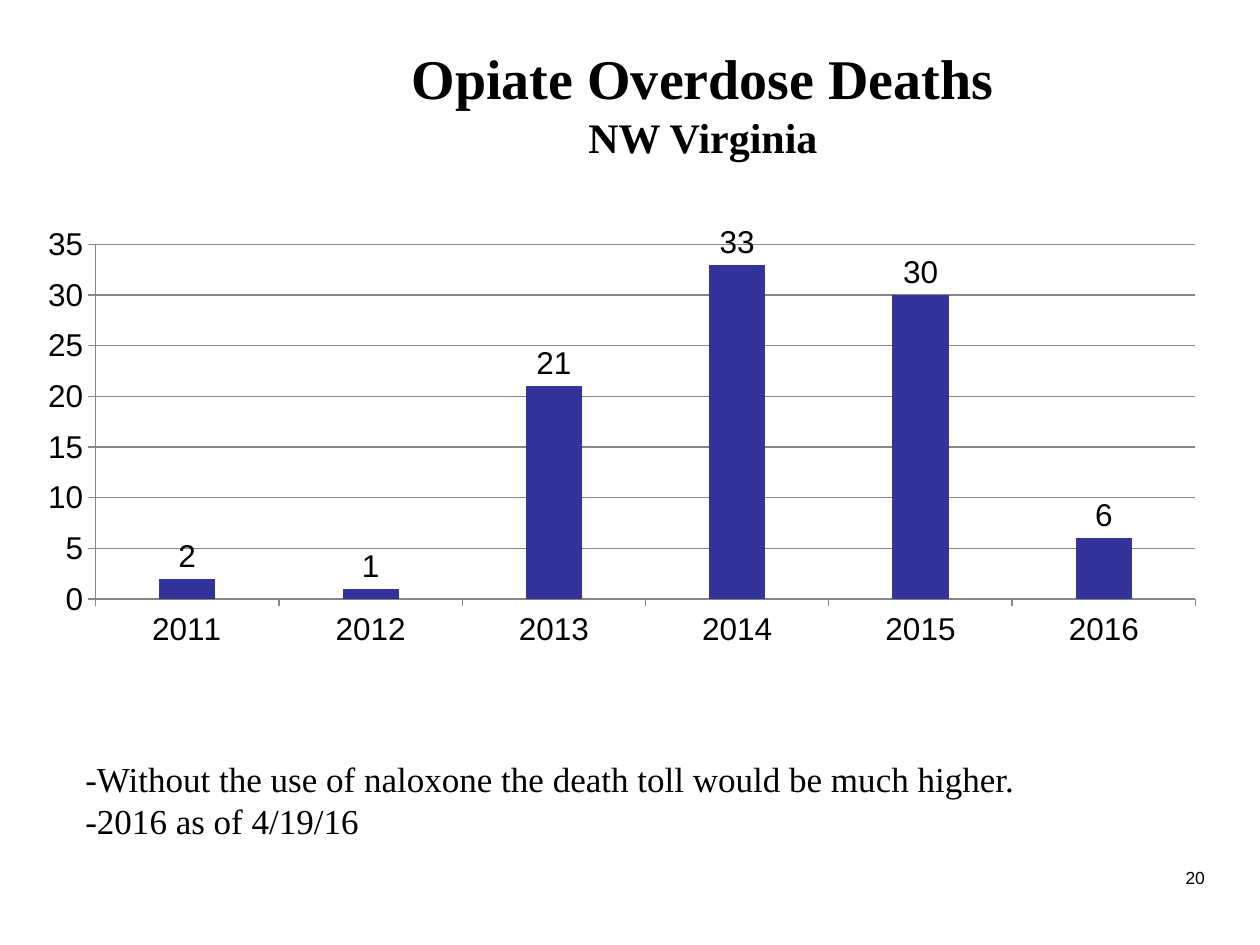
from lxml import etree
from pptx import Presentation
from pptx.chart.data import CategoryChartData
from pptx.dml.color import RGBColor
from pptx.enum.chart import XL_CHART_TYPE, XL_LABEL_POSITION, XL_TICK_MARK
from pptx.enum.text import MSO_ANCHOR, MSO_AUTO_SIZE, PP_ALIGN
from pptx.oxml.ns import qn
from pptx.util import Cm, Pt

COLUMNS = XL_CHART_TYPE.COLUMN_CLUSTERED
OUTSIDE_END = XL_LABEL_POSITION.OUTSIDE_END
TICK_OUT = XL_TICK_MARK.OUTSIDE
TICK_NONE = XL_TICK_MARK.NONE
LEFT, CENTER, RIGHT = PP_ALIGN.LEFT, PP_ALIGN.CENTER, PP_ALIGN.RIGHT
MIDDLE = MSO_ANCHOR.MIDDLE
NO_FIT = MSO_AUTO_SIZE.NONE

BLACK = RGBColor(0x00, 0x00, 0x00)
INDIGO = RGBColor(0x33, 0x33, 0x99)
GRAY = RGBColor(0x86, 0x86, 0x86)
SERIF, SANS = "Times New Roman", "Arial"

YEARS = ["2011", "2012", "2013", "2014", "2015", "2016"]
DEATHS = {
    "Series 1": [2, 0, 0, None, None, None],
    "Series 2": [0, 1, 0, None, None, None],
    "Series 3": [0, 0, 21, None, None, None],
    "Series 4": [None, None, None, 33, None, None],
    "Series 5": [None, None, None, None, 30, 6],
}
PLOT_AREA = {"x": 0.06, "y": 0.055, "w": 0.888, "h": 0.735}


def format_font(font, name, size, bold=False):
    """Set the typeface, size, weight and black colour of a font."""
    font.name = name
    font.size = Pt(size)
    font.bold = bold
    font.color.rgb = BLACK


def add_span(para, text, **style):
    """Append a formatted run to a paragraph."""
    span = para.add_run()
    span.text = text
    format_font(span.font, **style)


def add_text(page, lines, left, top, width, height, align=LEFT, **style):
    """Add a wrapped text box with one paragraph for each line."""
    frame = page.shapes.add_textbox(left, top, width, height).text_frame
    frame.word_wrap = True
    for index, line in enumerate(lines):
        para = frame.paragraphs[0] if index == 0 else frame.add_paragraph()
        para.alignment = align
        add_span(para, line, **style)


def fill_title(page, left, top, width, height):
    """Move the title placeholder and write the heading and region."""
    title = page.shapes.title
    title.left, title.top, title.width, title.height = left, top, width, height
    frame = title.text_frame
    frame.word_wrap = True
    frame.auto_size = NO_FIT
    frame.vertical_anchor = MIDDLE
    para = frame.paragraphs[0]
    para.alignment = CENTER
    add_span(para, "Opiate Overdose Deaths", name=SERIF, size=32, bold=True)
    para.add_line_break()
    add_span(para, "NW Virginia", name=SERIF, size=24, bold=True)


def set_plot_area(chart, area):
    """Fix the inner plot area to fractions of the chart box."""
    plot_area = chart._chartSpace.chart.plotArea
    for old in plot_area.findall(qn("c:layout")):
        plot_area.remove(old)
    layout = etree.Element(qn("c:layout"))
    plot_area.insert(0, layout)
    manual = etree.SubElement(layout, qn("c:manualLayout"))
    settings = {"layoutTarget": "inner", "xMode": "edge", "yMode": "edge", **area}
    for tag, value in settings.items():
        etree.SubElement(manual, qn(f"c:{tag}")).set("val", str(value))


def add_deaths_chart(page, left, top, width, height):
    """Add the column chart of deaths for each year."""
    data = CategoryChartData()
    data.categories = YEARS
    for name, values in DEATHS.items():
        data.add_series(name, values)
    chart = page.shapes.add_chart(COLUMNS, left, top, width, height, data).chart
    chart.has_legend = False
    chart.has_title = False
    format_font(chart.font, SANS, 18)
    set_plot_area(chart, PLOT_AREA)

    plot = chart.plots[0]
    plot.vary_by_categories = False
    plot.gap_width = 227
    plot.overlap = 100
    for series in plot.series:
        series.format.fill.solid()
        series.format.fill.fore_color.rgb = INDIGO
        labels = series.data_labels
        labels.show_value = True
        labels.position = OUTSIDE_END
        labels.number_format = "0;;;"
        labels.number_format_is_linked = False
        format_font(labels.font, SANS, 18)

    for axis in (chart.category_axis, chart.value_axis):
        axis.major_tick_mark = TICK_OUT
        axis.minor_tick_mark = TICK_NONE
        axis.format.line.color.rgb = GRAY
        axis.format.line.width = Pt(0.75)
    values = chart.value_axis
    values.minimum_scale, values.maximum_scale, values.major_unit = 0, 35, 5
    values.has_major_gridlines = True
    values.major_gridlines.format.line.color.rgb = GRAY
    values.major_gridlines.format.line.width = Pt(0.75)


def build_page(deck):
    """Place the title, chart, notes and page number on a page."""
    page = deck.slides.add_slide(deck.slide_layouts[5])
    add_deaths_chart(page, Cm(0.43), Cm(4.39), Cm(24.97), Cm(9.73))
    fill_title(page, Cm(1.47), Cm(0.48), Cm(25.4), Cm(3.18))
    notes = [
        "-Without the use of naloxone the death toll would be much higher.",
        "-2016 as of 4/19/16",
    ]
    add_text(page, notes, Cm(1.47), Cm(15.14), Cm(22.43), Cm(1.96),
             name=SERIF, size=20)
    add_text(page, ["20"], Cm(18.62), Cm(17.35), Cm(5.92), Cm(1.32),
             align=RIGHT, name=SANS, size=10)


def main():
    """Build and save the deck."""
    deck = Presentation()
    deck.slide_width, deck.slide_height = Cm(25.4), Cm(19.05)
    build_page(deck)
    deck.save("out.pptx")


if __name__ == "__main__":
    main()
